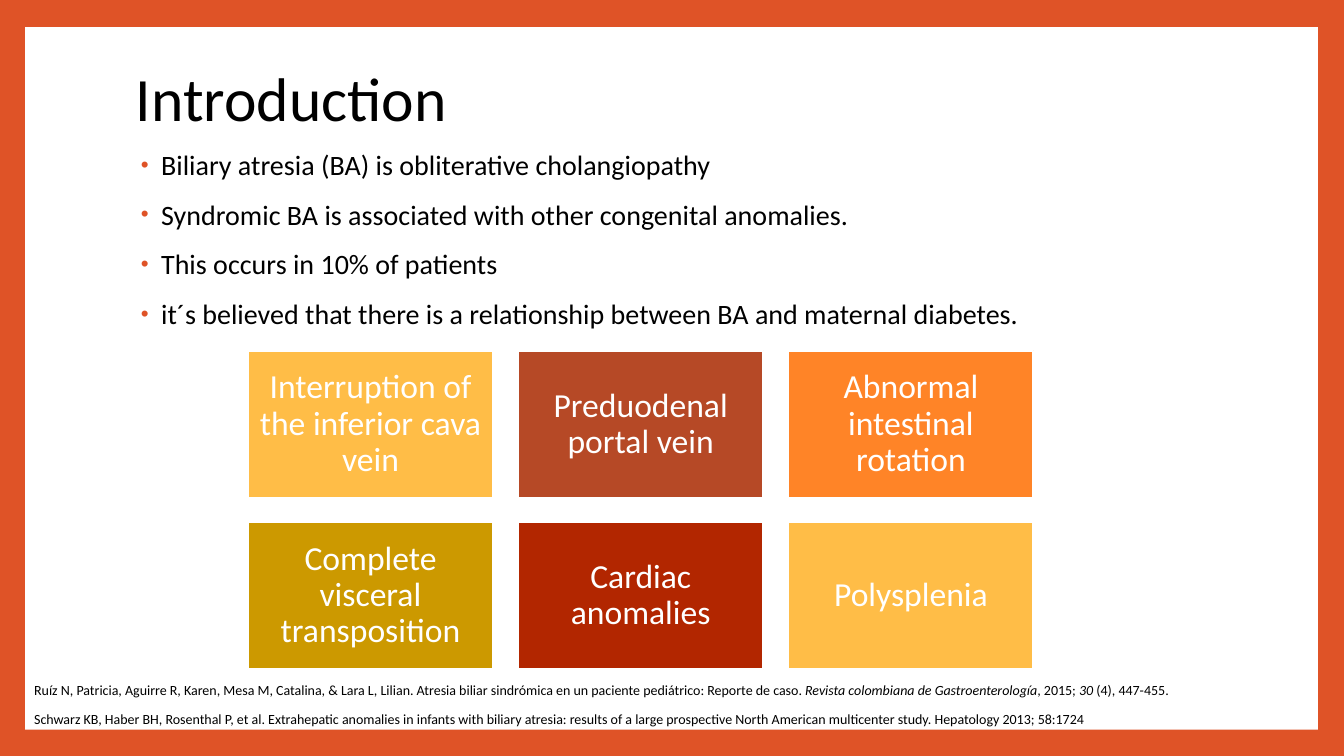
from dataclasses import dataclass

import pptx
import pptx.dml.color
import pptx.enum.shapes
import pptx.enum.text
import pptx.oxml
import pptx.oxml.ns
import pptx.util
from pptx.util import Inches

ALIGN = pptx.enum.text.PP_ALIGN
ANCHOR = pptx.enum.text.MSO_ANCHOR
RECTANGLE = pptx.enum.shapes.MSO_SHAPE.RECTANGLE


@dataclass(frozen=True)
class Theme:
    font: str = "Calibri"
    frame: str = "DF5327"
    paper: str = "FFFFFF"
    ink: str = "000000"
    amber: str = "FFBD47"
    rust: str = "B64926"
    orange: str = "FF8427"
    mustard: str = "CC9900"
    crimson: str = "B22600"
    title_size: int = 44
    card_size: int = 24
    body_size: int = 20
    reference_size: int = 10


THEME = Theme()

POINTS = [
    "Biliary atresia (BA) is obliterative cholangiopathy",
    "Syndromic BA is associated with other congenital anomalies.",
    "This occurs in 10% of patients",
    "it´s believed that there is a relationship between BA and maternal diabetes.",
]
ANOMALIES = [
    ("Interruption of the inferior cava vein", THEME.amber),
    ("Preduodenal portal vein", THEME.rust),
    ("Abnormal intestinal rotation", THEME.orange),
    ("Complete visceral transposition", THEME.mustard),
    ("Cardiac anomalies", THEME.crimson),
    ("Polysplenia", THEME.amber),
]
REFERENCES = [
    [
        ("Ruíz N, Patricia, Aguirre R, Karen, Mesa M, Catalina, & Lara L, Lilian. "
         "Atresia biliar sindrómica en un paciente pediátrico: Reporte de caso. ", False),
        ("Revista colombiana de Gastroenterología", True),
        (", 2015; ", False),
        ("30", True),
        (" (4), 447-455.", False),
    ],
    [
        ("Schwarz KB, Haber BH, Rosenthal P, et al. Extrahepatic anomalies in infants "
         "with biliary atresia: results of a large prospective North American "
         "multicenter study. Hepatology 2013; 58:1724", False),
    ],
]


def rgb(color):
    return pptx.dml.color.RGBColor.from_string(color)


def style_paragraph(para, size, color, line_spacing=0.9):
    para.line_spacing = line_spacing
    para.font.name = THEME.font
    para.font.size = pptx.util.Pt(size)
    para.font.color.rgb = rgb(color)


def add_bullet(para):
    properties = para._p.get_or_add_pPr()
    properties.set("marL", str(Inches(0.25)))
    properties.set("indent", str(Inches(-0.2)))
    namespace = pptx.oxml.ns.nsdecls("a")
    for element in (
        f'<a:buClr {namespace}><a:srgbClr val="{THEME.frame}"/></a:buClr>',
        f'<a:buSzPct {namespace} val="80000"/>',
        f'<a:buFont {namespace} typeface="Arial"/>',
        f'<a:buChar {namespace} char="•"/>',
    ):
        properties.append(pptx.oxml.parse_xml(element))


def add_text_frame(page, left, top, width, height, anchor=ANCHOR.TOP):
    box = page.shapes.add_textbox(Inches(left), Inches(top), Inches(width), Inches(height))
    frame = box.text_frame
    frame.word_wrap = True
    frame.vertical_anchor = anchor
    return frame


def add_paragraphs(frame, count):
    return [frame.paragraphs[0]] + [frame.add_paragraph() for _ in range(count - 1)]


def add_rectangle(page, left, top, width, height, color):
    box = page.shapes.add_shape(
        RECTANGLE, Inches(left), Inches(top), Inches(width), Inches(height))
    box.shadow.inherit = False
    box.fill.solid()
    box.fill.fore_color.rgb = rgb(color)
    box.line.fill.background()
    return box


def add_title(page, text):
    frame = add_text_frame(page, 1.25, 0.27, 10.8, 1.48, ANCHOR.MIDDLE)
    para = frame.paragraphs[0]
    para.text = text
    style_paragraph(para, THEME.title_size, THEME.ink)


def add_points(page):
    frame = add_text_frame(page, 1.25, 1.45, 10.8, 2)
    for index, para in enumerate(add_paragraphs(frame, len(POINTS))):
        para.text = POINTS[index]
        para.alignment = ALIGN.JUSTIFY
        add_bullet(para)
        style_paragraph(para, THEME.body_size, THEME.ink)
        if index:
            para.space_before = pptx.util.Pt(14)


def add_anomaly_card(page, left, top, text, color):
    box = add_rectangle(page, left, top, 2.43, 1.46, color)
    box.line.color.rgb = rgb(THEME.paper)
    box.line.width = pptx.util.Pt(1.5)
    frame = box.text_frame
    frame.word_wrap = True
    frame.vertical_anchor = ANCHOR.MIDDLE
    frame.margin_left = frame.margin_right = Inches(0.1)
    frame.margin_top = frame.margin_bottom = Inches(0.1)
    para = frame.paragraphs[0]
    para.text = text
    para.alignment = ALIGN.CENTER
    style_paragraph(para, THEME.card_size, THEME.paper)


def add_anomaly_grid(page):
    for index, (text, color) in enumerate(ANOMALIES):
        row, column = divmod(index, 3)
        add_anomaly_card(page, 2.46 + 2.68 * column, 3.48 + 1.7 * row, text, color)


def add_references(page):
    frame = add_text_frame(page, 0.24, 6.7, 12.81, 0.57)
    for para, spans in zip(add_paragraphs(frame, len(REFERENCES)), REFERENCES):
        for text, italic in spans:
            span = para.add_run()
            span.text = text
            span.font.italic = italic
        style_paragraph(para, THEME.reference_size, THEME.ink, 1.07)
        para.space_after = pptx.util.Pt(8)


def main():
    deck = pptx.Presentation()
    deck.slide_width = Inches(13.33)
    deck.slide_height = Inches(7.5)
    page = deck.slides.add_slide(deck.slide_layouts[6])
    page.background.fill.solid()
    page.background.fill.fore_color.rgb = rgb(THEME.frame)
    add_rectangle(page, 0.25, 0.27, 12.82, 6.97, THEME.paper)
    add_title(page, "Introduction")
    add_anomaly_grid(page)
    add_points(page)
    add_references(page)
    deck.save("out.pptx")


if __name__ == "__main__":
    main()
